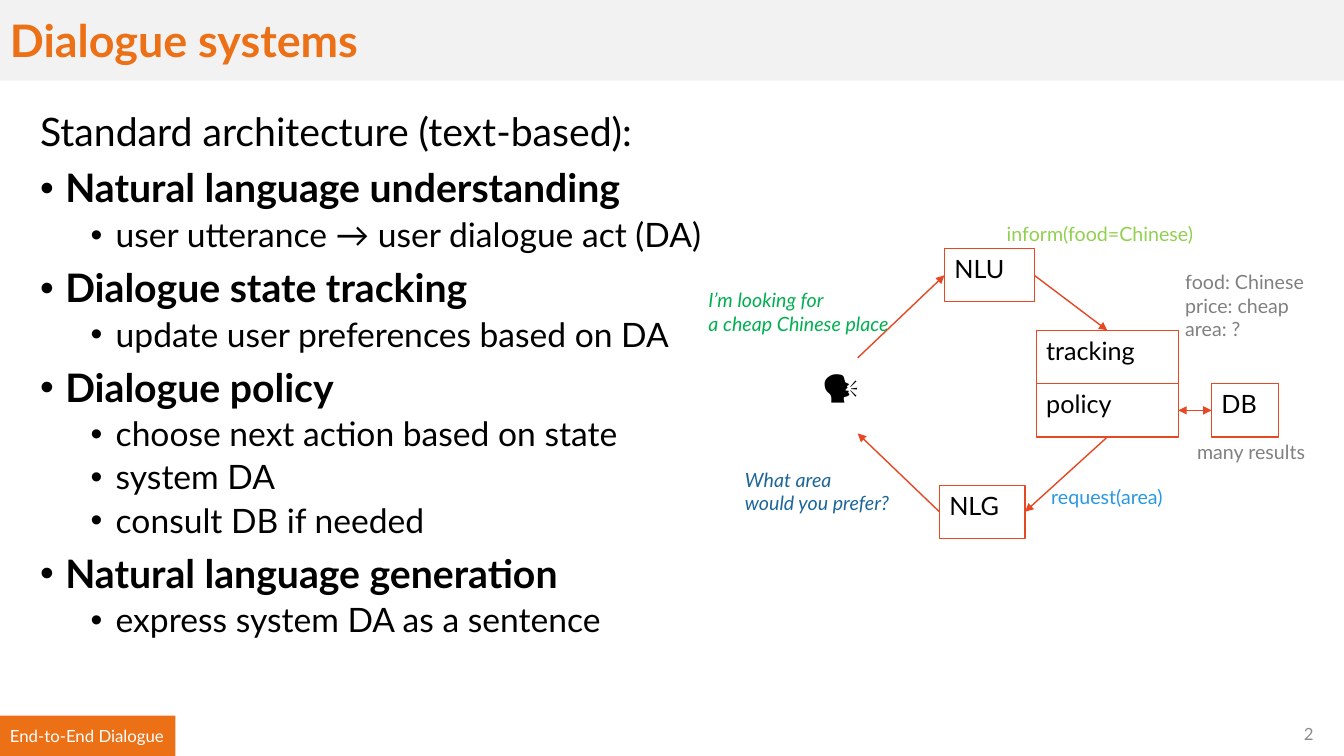
from typing import NamedTuple

from lxml.etree import SubElement
from pptx import Presentation
from pptx.dml.color import RGBColor
from pptx.enum.shapes import MSO_CONNECTOR as Connector, MSO_SHAPE as Preset
from pptx.enum.text import MSO_ANCHOR as Anchor, PP_ALIGN as Align
from pptx.oxml.ns import qn
from pptx.shapes.autoshape import Shape
from pptx.slide import Slide
from pptx.text.text import TextFrame
from pptx.util import Pt

FONT = "Lato"
COLORS = {
    "orange": "EC7016", "band": "F2F2F2", "black": "000000", "white": "FFFFFF",
    "page": "8C8C8C", "flow": "E64823", "user": "00B050", "act": "92D050",
    "state": "808080", "request": "2998E3", "system": "1C669A",
}
TOP, LEFT, BOTTOM, RIGHT = range(4)
MODULE_HEIGHT = 38.1


class Box(NamedTuple):
    left: float
    top: float
    width: float
    height: float


class Module(NamedTuple):
    name: str
    left: float
    top: float
    width: float


class Flow(NamedTuple):
    source: str
    source_side: int
    target: str
    target_side: int
    two_way: bool = False


class Label(NamedTuple):
    text: str
    box: Box
    color: str
    italic: bool = False


class Topic(NamedTuple):
    heading: str
    details: list[str]


TOPICS = [
    Topic("Natural language understanding", ["user utterance → user dialogue act (DA)"]),
    Topic("Dialogue state tracking", ["update user preferences based on DA"]),
    Topic("Dialogue policy",
          ["choose next action based on state", "system DA", "consult DB if needed"]),
    Topic("Natural language generation", ["express system DA as a sentence"]),
]
MODULES = [
    Module("NLU", 674.6, 177.6, 64.2),
    Module("tracking", 740.2, 236, 101.5),
    Module("policy", 740.2, 236 + MODULE_HEIGHT, 101.5),
    Module("NLG", 671, 346.5, 61.2),
    Module("DB", 865.4, 236 + MODULE_HEIGHT, 48.2),
]
SPEAKER = "🗣"
FLOWS = [
    Flow("DB", LEFT, "policy", RIGHT, two_way=True),
    Flow("NLU", RIGHT, "tracking", TOP),
    Flow("policy", BOTTOM, "NLG", RIGHT),
    Flow("NLG", LEFT, SPEAKER, BOTTOM),
    Flow(SPEAKER, TOP, "NLU", LEFT),
]
LABELS = [
    Label("I’m looking for \va cheap Chinese place", Box(499, 202.3, 188, 54), "user", True),
    Label("inform(food=Chinese)", Box(712, 154.8, 190, 31.7), "act"),
    Label("food: Chinese\nprice: cheap\narea: ?", Box(839.5, 189.4, 120, 76.3), "state"),
    Label("request(area)", Box(743.8, 342.7, 124.6, 31.7), "request"),
    Label("What area \vwould you prefer?", Box(525, 330.5, 154.8, 54), "system", True),
    Label("many results", Box(848, 311, 111, 31.7), "state"),
]


def rgb(color: str) -> RGBColor:
    return RGBColor.from_string(COLORS[color])


def write(frame: TextFrame, text: str, size: float, color: str, bold: bool = False,
          italic: bool = False, align: Align = Align.LEFT, anchor: Anchor = Anchor.TOP) -> None:
    frame.text = text
    frame.word_wrap = True
    frame.vertical_anchor = anchor
    for paragraph in frame.paragraphs:
        paragraph.alignment = align
        for run in paragraph.runs:
            run.font.name, run.font.size = FONT, Pt(size)
            run.font.bold, run.font.italic = bold, italic
            run.font.color.rgb = rgb(color)


def add_rectangle(slide: Slide, box: Box, fill: str = "", line: str = "") -> Shape:
    rectangle = slide.shapes.add_shape(Preset.RECTANGLE, *map(Pt, box))
    rectangle.shadow.inherit = False
    if fill:
        rectangle.fill.solid()
        rectangle.fill.fore_color.rgb = rgb(fill)
    else:
        rectangle.fill.background()
    if line:
        rectangle.line.color.rgb = rgb(line)
        rectangle.line.width = Pt(0.75)
    else:
        rectangle.line.fill.background()
    return rectangle


def add_text(slide: Slide, box: Box) -> Shape:
    return slide.shapes.add_textbox(*map(Pt, box))


def add_flow(slide: Slide, flow: Flow, stations: dict[str, Shape]) -> None:
    arrow = slide.shapes.add_connector(Connector.STRAIGHT, 0, 0, 0, 0)
    arrow.begin_connect(stations[flow.source], flow.source_side)
    arrow.end_connect(stations[flow.target], flow.target_side)
    arrow.line.color.rgb = rgb("flow")
    arrow.line.width = Pt(1)
    outline = arrow.line._get_or_add_ln()
    for end in ["headEnd", "tailEnd"] if flow.two_way else ["tailEnd"]:
        SubElement(outline, qn(f"a:{end}"), type="triangle")
    SubElement(arrow._element.spPr, qn("a:effectLst"))


def add_outline(slide: Slide) -> None:
    """Write the introduction and the bulleted topics with their details."""
    frame = add_text(slide, Box(21.6, 77, 916.6, 416.9)).text_frame
    entries = [("Standard architecture (text-based):", None)]
    for topic in TOPICS:
        entries += [(topic.heading, 0), *((detail, 1) for detail in topic.details)]
    write(frame, "\n".join(text for text, _ in entries), 28, "black")
    for paragraph, (_, level) in zip(frame.paragraphs, entries):
        paragraph.line_spacing = 0.9
        paragraph.space_before = Pt(5 if level == 1 else 10)
        if level is None:
            continue
        paragraph.level = level
        font = paragraph.runs[0].font
        font.bold, font.size = level == 0, Pt(28 - 4 * level)
        properties = paragraph._p.get_or_add_pPr()
        properties.set("marL", str(Pt(18 + 36 * level)))
        properties.set("indent", str(-Pt(18)))
        SubElement(properties, qn("a:buFont"), typeface="Arial")
        SubElement(properties, qn("a:buChar"), char="•")


def add_architecture(slide: Slide) -> None:
    """Draw the dialogue loop: modules, speaker, arrows and example messages."""
    stations = {}
    for module in MODULES:
        box = Box(module.left, module.top, module.width, MODULE_HEIGHT)
        stations[module.name] = add_rectangle(slide, box, line="flow")
        write(stations[module.name].text_frame, module.name, 18, "black")
    stations[SPEAKER] = add_text(slide, Box(579.6, 255.6, 66.2, 54))
    write(stations[SPEAKER].text_frame, SPEAKER, 28, "black")
    for flow in FLOWS:
        add_flow(slide, flow, stations)
    for label in LABELS:
        write(add_text(slide, label.box).text_frame, label.text, 14, label.color,
              italic=label.italic)


def main() -> None:
    deck = Presentation()
    deck.slide_width, deck.slide_height = Pt(960), Pt(540)
    slide = deck.slides.add_slide(deck.slide_layouts[6])

    title = add_rectangle(slide, Box(0, 0, 960, 57.6), fill="band").text_frame
    write(title, "Dialogue systems", 32, "orange", bold=True, anchor=Anchor.MIDDLE)
    title.margin_top = Pt(7.2)
    title.paragraphs[0].line_spacing = 0.9

    add_outline(slide)

    page = add_text(slide, Box(744, 509.8, 216, 28.8)).text_frame
    write(page, "2", 12, "page", align=Align.RIGHT, anchor=Anchor.MIDDLE)
    page.margin_left = page.margin_right = Pt(21.6)

    add_architecture(slide)

    footer = add_rectangle(slide, Box(0, 511.2, 125.4, 28.8), fill="orange").text_frame
    write(footer, "End-to-End Dialogue", 12, "white", anchor=Anchor.MIDDLE)

    deck.save("out.pptx")


if __name__ == "__main__":
    main()
